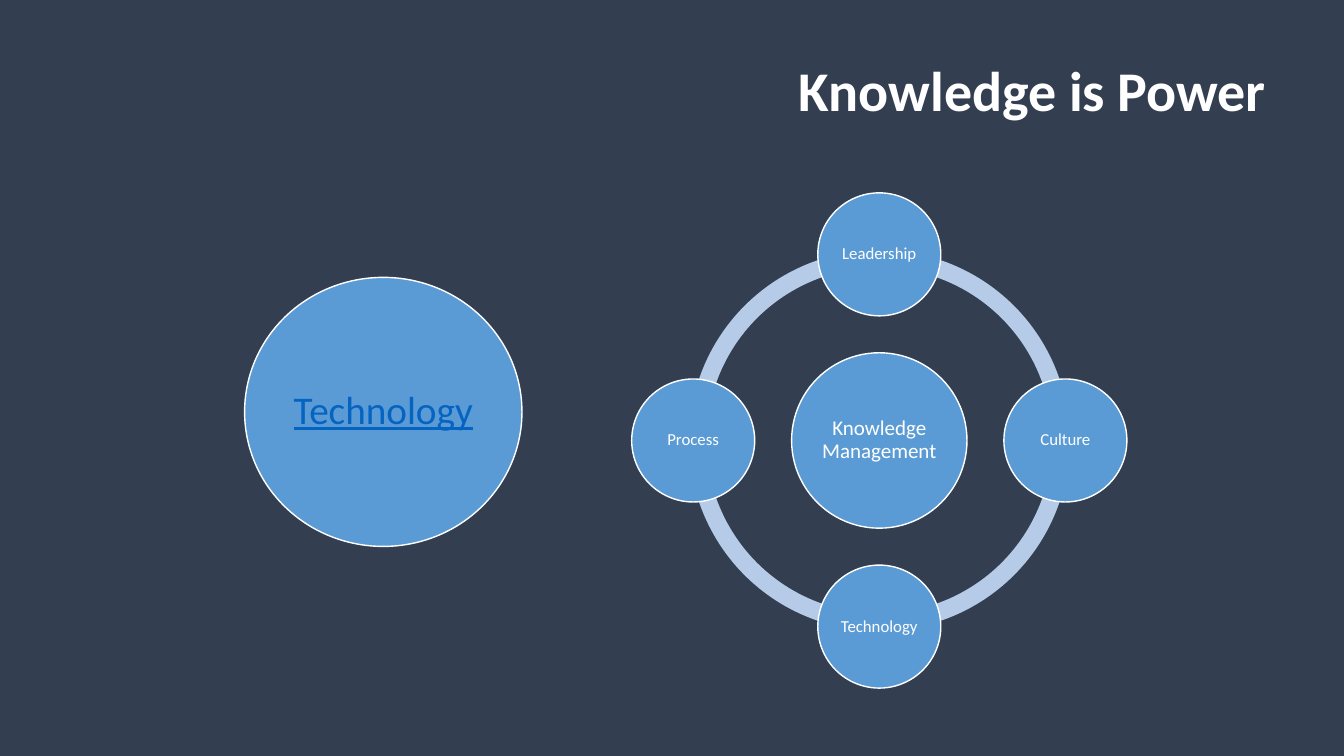
from dataclasses import dataclass
from math import cos, pi, sin

from pptx import Presentation
from pptx.dml.color import RGBColor
from pptx.enum.shapes import MSO_SHAPE
from pptx.enum.text import MSO_ANCHOR, MSO_AUTO_SIZE, PP_ALIGN
from pptx.shapes.autoshape import Shape
from pptx.shapes.shapetree import GroupShapes
from pptx.text.text import TextFrame
from pptx.util import Cm, Pt

ELLIPSE = MSO_SHAPE.OVAL
BLOCK_ARC = MSO_SHAPE.BLOCK_ARC
MIDDLE = MSO_ANCHOR.MIDDLE
NO_AUTOFIT = MSO_AUTO_SIZE.NONE
CENTER = PP_ALIGN.CENTER
RIGHT = PP_ALIGN.RIGHT

NAVY = RGBColor(0x33, 0x3F, 0x50)
BLUE = RGBColor(0x5B, 0x9B, 0xD5)
PALE_BLUE = RGBColor(0xB5, 0xCB, 0xE7)
LINK_BLUE = RGBColor(0x05, 0x63, 0xC1)
WHITE = RGBColor(0xFF, 0xFF, 0xFF)

FRAME_FORMAT = {
    "word_wrap": True,
    "auto_size": NO_AUTOFIT,
    "vertical_anchor": MIDDLE,
}
CIRCLE_INSETS = {
    f"margin_{side}": Cm(0.05) for side in ("left", "right", "top", "bottom")
}

# Lengths in centimetres
WHEEL_X, WHEEL_Y = 22.16, 11.1
RING_DIAMETER = 9.6
ORBIT_RADIUS = 4.69
SATELLITE_DIAMETER = 3.1
HUB_DIAMETER = 4.42
ASPECTS = ("Leadership", "Culture", "Technology", "Process")
QUARTER_TURN = 54  # 90 degrees in units of 100000 / 60000 degree
RING_THICKNESS = 0.046


@dataclass
class Circle:
    text: str
    center_x: float
    center_y: float
    width: float
    height: float
    size: int
    color: RGBColor = WHITE
    underline: bool = False


def set_attributes(target: object, values: dict) -> None:
    for name, value in values.items():
        setattr(target, name, value)


def write_text(frame: TextFrame, text: str, alignment: PP_ALIGN, font_format: dict) -> None:
    set_attributes(frame, FRAME_FORMAT)
    paragraph = frame.paragraphs[0]
    set_attributes(paragraph, {"alignment": alignment, "line_spacing": 0.9})
    run = paragraph.add_run()
    run.text = text
    color = font_format["color"]
    values = {name: value for name, value in font_format.items() if name != "color"}
    set_attributes(run.font, {"name": "Calibri", **values})
    run.font.color.rgb = color


def add_centered(
    shapes: GroupShapes, kind: MSO_SHAPE, x: float, y: float,
    width: float, height: float, fill: RGBColor,
) -> Shape:
    shape = shapes.add_shape(
        kind, Cm(x - width / 2), Cm(y - height / 2), Cm(width), Cm(height)
    )
    shape.shadow.inherit = False
    shape.fill.solid()
    shape.fill.fore_color.rgb = fill
    return shape


def add_circle(shapes: GroupShapes, circle: Circle) -> None:
    shape = add_centered(
        shapes, ELLIPSE, circle.center_x, circle.center_y,
        circle.width, circle.height, BLUE,
    )
    shape.line.color.rgb = WHITE
    shape.line.width = Pt(1)
    set_attributes(shape.text_frame, CIRCLE_INSETS)
    write_text(shape.text_frame, circle.text, CENTER, {
        "size": Pt(circle.size),
        "color": circle.color,
        "underline": circle.underline,
    })


def add_ring(shapes: GroupShapes) -> None:
    for quarter in (2, 1, 0, 3):
        arc = add_centered(
            shapes, BLOCK_ARC, WHEEL_X, WHEEL_Y,
            RING_DIAMETER, RING_DIAMETER, PALE_BLUE,
        )
        arc.line.fill.background()
        arc.adjustments[0] = quarter * QUARTER_TURN
        arc.adjustments[1] = (quarter + 1) % 4 * QUARTER_TURN
        arc.adjustments[2] = RING_THICKNESS


def wheel_circles() -> list[Circle]:
    """Return the hub and the aspects, clockwise from the top."""
    circles = [
        Circle("Knowledge Management", WHEEL_X, WHEEL_Y, HUB_DIAMETER, HUB_DIAMETER, 15)
    ]
    for index, aspect in enumerate(ASPECTS):
        angle = 2 * pi * index / len(ASPECTS)
        circles.append(Circle(
            aspect,
            WHEEL_X + ORBIT_RADIUS * sin(angle),
            WHEEL_Y - ORBIT_RADIUS * cos(angle),
            SATELLITE_DIAMETER, SATELLITE_DIAMETER, 12,
        ))
    return circles


def main() -> None:
    presentation = Presentation()
    presentation.slide_width = Cm(33.87)
    presentation.slide_height = Cm(19.05)
    slide = presentation.slides.add_slide(presentation.slide_layouts[5])
    slide.background.fill.solid()
    slide.background.fill.fore_color.rgb = NAVY

    title = slide.shapes.title
    set_attributes(title, {
        "left": Cm(8.74), "top": Cm(0.76), "width": Cm(23.42), "height": Cm(3.18),
    })
    write_text(title.text_frame, "Knowledge is Power", RIGHT, {
        "size": Pt(40), "bold": True, "color": WHITE,
    })

    wheel = slide.shapes.add_group_shape().shapes
    add_ring(wheel)
    for circle in wheel_circles():
        add_circle(wheel, circle)

    focus = slide.shapes.add_group_shape().shapes
    add_circle(focus, Circle("Technology", 9.66, 10.38, 6.99, 6.78, 28, LINK_BLUE, True))

    presentation.save("out.pptx")


if __name__ == "__main__":
    main()
